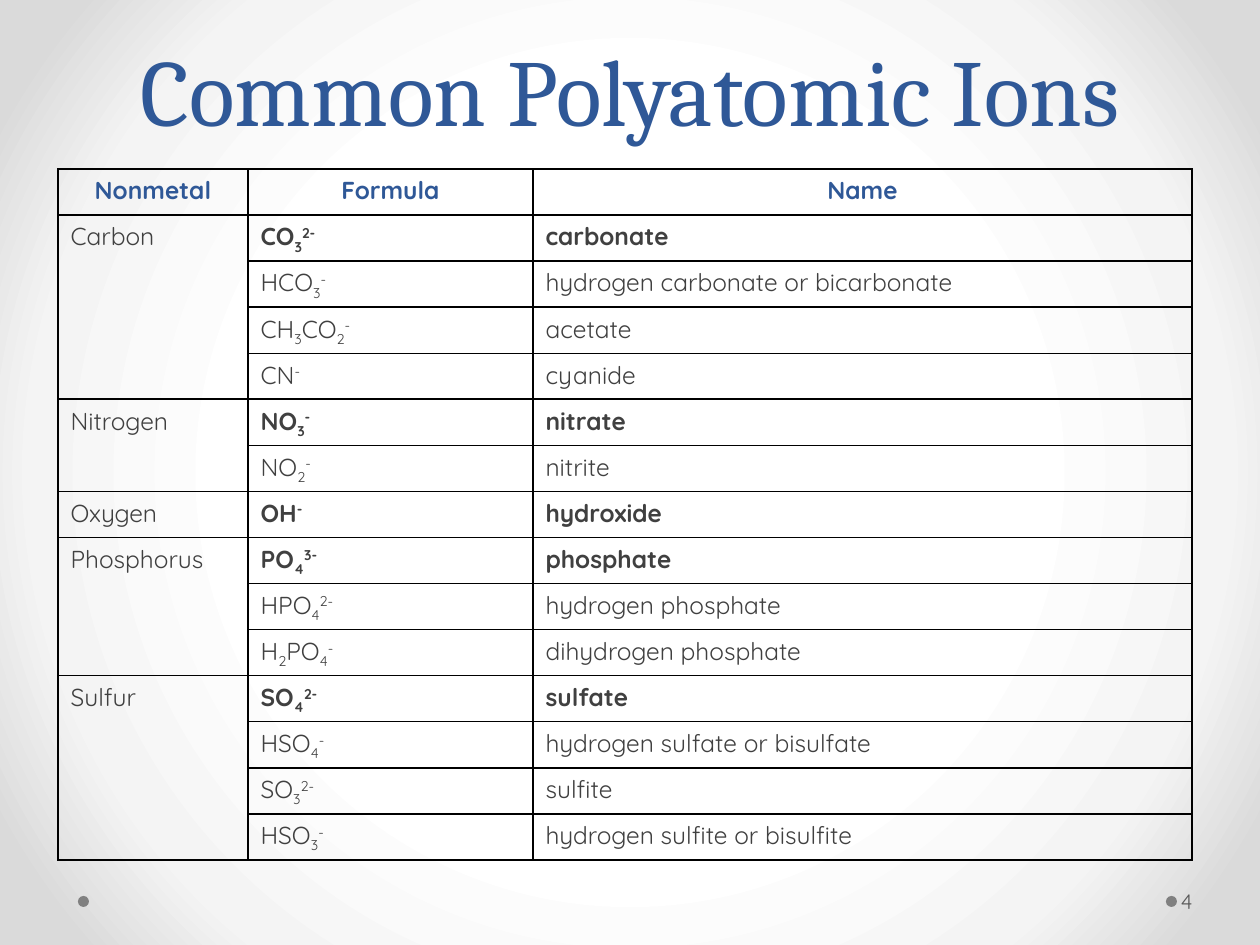
from dataclasses import dataclass
from typing import NamedTuple

from pptx import Presentation
from pptx.dml.color import RGBColor
from pptx.enum.shapes import MSO_SHAPE as Preset
from pptx.enum.text import MSO_ANCHOR as Anchor, PP_ALIGN as Align
from pptx.oxml import parse_xml
from pptx.oxml.ns import nsdecls, qn
from pptx.util import Emu, Pt

PX_PER_INCH = 126


def px(length: int) -> Emu:
    return Emu(round(length * 914400 / PX_PER_INCH))


@dataclass(frozen=True)
class Theme:
    heading_font: str = "Cambria"
    body_font: str = "Quicksand"
    accent: str = "2F5897"
    body: str = "404040"
    number: str = "595959"
    dot: str = "808080"
    border: str = "000000"
    title_size: int = 54
    title_leading: int = 58
    table_size: int = 14
    number_size: int = 12
    border_width: int = 1
    background: tuple = ((50, "FFFFFF"), (76, "F4F4F4"), (92, "DADADA"))


class Box(NamedTuple):
    left: int
    top: int
    width: int
    height: int

    def emu(self) -> list[Emu]:
        return [px(length) for length in self]


class Ion(NamedTuple):
    formula: str  # parts split by "|"; "_" lowers and "^" raises a part
    name: str


class Group(NamedTuple):
    nonmetal: str
    ions: list[Ion]  # the first ion is the main one, set in bold


THEME = Theme()
TITLE_BOX = Box(63, 0, 1134, 152)
NUMBER_BOX = Box(1177, 876, 77, 50)
DOTS = [Box(left, 896, 11, 11) for left in (78, 1166)]
TABLE_LEFT, TABLE_TOP = 58, 169
COLUMN_WIDTHS = (190, 285, 659)
ROW_HEIGHT = 46
HEADERS = ("Nonmetal", "Formula", "Name")
BASELINES = {"_": "-25000", "^": "30000"}

GROUPS = [
    Group("Carbon", [
        Ion("CO|_3|^2-", "carbonate"),
        Ion("HCO|_3|^-", "hydrogen carbonate or bicarbonate"),
        Ion("CH|_3|CO|_2|^-", "acetate"),
        Ion("CN|^-", "cyanide"),
    ]),
    Group("Nitrogen", [
        Ion("NO|_3|^-", "nitrate"),
        Ion("NO|_2|^-", "nitrite"),
    ]),
    Group("Oxygen", [Ion("OH|^-", "hydroxide")]),
    Group("Phosphorus", [
        Ion("PO|_4|^3-", "phosphate"),
        Ion("HPO|_4|^2-", "hydrogen phosphate"),
        Ion("H|_2|PO|_4|^-", "dihydrogen phosphate"),
    ]),
    Group("Sulfur", [
        Ion("SO|_4|^2-", "sulfate"),
        Ion("HSO|_4|^-", "hydrogen sulfate or bisulfate"),
        Ion("SO|_3|^2-", "sulfite"),
        Ion("HSO|_3|^-", "hydrogen sulfite or bisulfite"),
    ]),
]


def write(frame, text: str, *, size: int = THEME.table_size, font: str = THEME.body_font,
          color: str = THEME.body, bold: bool = False, align=Align.LEFT, leading=None) -> None:
    """Fill the first paragraph, raising and lowering the marked parts."""
    paragraph = frame.paragraphs[0]
    paragraph.alignment = align
    if leading:
        paragraph.line_spacing = Pt(leading)
    for part in text.split("|"):
        run = paragraph.add_run()
        run.text = part.lstrip("_^")
        run.font.size, run.font.name, run.font.bold = Pt(size), font, bold
        run.font.color.rgb = RGBColor.from_string(color)
        if part[0] in BASELINES:
            run.font._element.set("baseline", BASELINES[part[0]])


def add_text(slide, box: Box, text: str, *, anchor, left_inset: int = 13,
             right_inset: int = 13, **text_format) -> None:
    frame = slide.shapes.add_textbox(*box.emu()).text_frame
    frame.word_wrap = True
    frame.vertical_anchor = anchor
    frame.margin_left, frame.margin_right = px(left_inset), px(right_inset)
    write(frame, text, **text_format)


def add_dot(slide, box: Box) -> None:
    shape = slide.shapes.add_shape(Preset.OVAL, *box.emu())
    shape.shadow.inherit = False
    shape.fill.solid()
    shape.fill.fore_color.rgb = RGBColor.from_string(THEME.dot)
    shape.line.fill.background()


def set_background(slide) -> None:
    slide.background.fill.solid()
    properties = slide.element.find(".//" + qn("p:bgPr"))
    stops = "".join(f'<a:gs pos="{position * 1000}"><a:srgbClr val="{color}"/></a:gs>'
                    for position, color in THEME.background)
    gradient = parse_xml(
        f'<a:gradFill {nsdecls("a")} rotWithShape="1"><a:gsLst>{stops}</a:gsLst>'
        '<a:path path="circle"><a:fillToRect l="50000" t="50000" r="50000" b="50000"/>'
        '</a:path></a:gradFill>')
    properties.replace(properties.find(qn("a:solidFill")), gradient)


def style_cell(cell) -> None:
    """Clear the fill and draw all four borders."""
    cell.fill.background()
    properties = cell._tc.get_or_add_tcPr()
    for index, side in enumerate(("lnL", "lnR", "lnT", "lnB")):
        properties.insert(index, parse_xml(
            f'<a:{side} {nsdecls("a")} w="{Pt(THEME.border_width)}"><a:solidFill>'
            f'<a:srgbClr val="{THEME.border}"/></a:solidFill></a:{side}>'))


def add_ion_table(slide) -> None:
    row_count = 1 + sum(len(group.ions) for group in GROUPS)
    box = Box(TABLE_LEFT, TABLE_TOP, sum(COLUMN_WIDTHS), row_count * ROW_HEIGHT)
    table = slide.shapes.add_table(row_count, len(HEADERS), *box.emu()).table
    table.first_row = table.horz_banding = False
    for column, width in zip(table.columns, COLUMN_WIDTHS):
        column.width = px(width)
    for row in table.rows:
        row.height = px(ROW_HEIGHT)
        for cell in row.cells:
            style_cell(cell)

    # Header row
    for column, header in enumerate(HEADERS):
        write(table.cell(0, column).text_frame, header,
              color=THEME.accent, bold=True, align=Align.CENTER)

    # One merged nonmetal cell per group, one row per ion
    row = 1
    for group in GROUPS:
        first = table.cell(row, 0)
        write(first.text_frame, group.nonmetal)
        if len(group.ions) > 1:
            first.merge(table.cell(row + len(group.ions) - 1, 0))
        for index, ion in enumerate(group.ions):
            for column, text in enumerate(ion, start=1):
                write(table.cell(row + index, column).text_frame, text, bold=index == 0)
        row += len(group.ions)


def main() -> None:
    presentation = Presentation()
    presentation.slide_width, presentation.slide_height = px(1260), px(945)
    slide = presentation.slides.add_slide(presentation.slide_layouts[6])
    set_background(slide)

    # Footer dots
    for box in DOTS:
        add_dot(slide, box)

    # Title, slide number and table
    add_text(slide, TITLE_BOX, "Common Polyatomic Ions", anchor=Anchor.BOTTOM,
             size=THEME.title_size, font=THEME.heading_font, color=THEME.accent,
             align=Align.CENTER, leading=THEME.title_leading)
    add_text(slide, NUMBER_BOX, "4", anchor=Anchor.MIDDLE, left_inset=4, right_inset=6,
             size=THEME.number_size, color=THEME.number)
    add_ion_table(slide)
    presentation.save("out.pptx")


if __name__ == "__main__":
    main()
